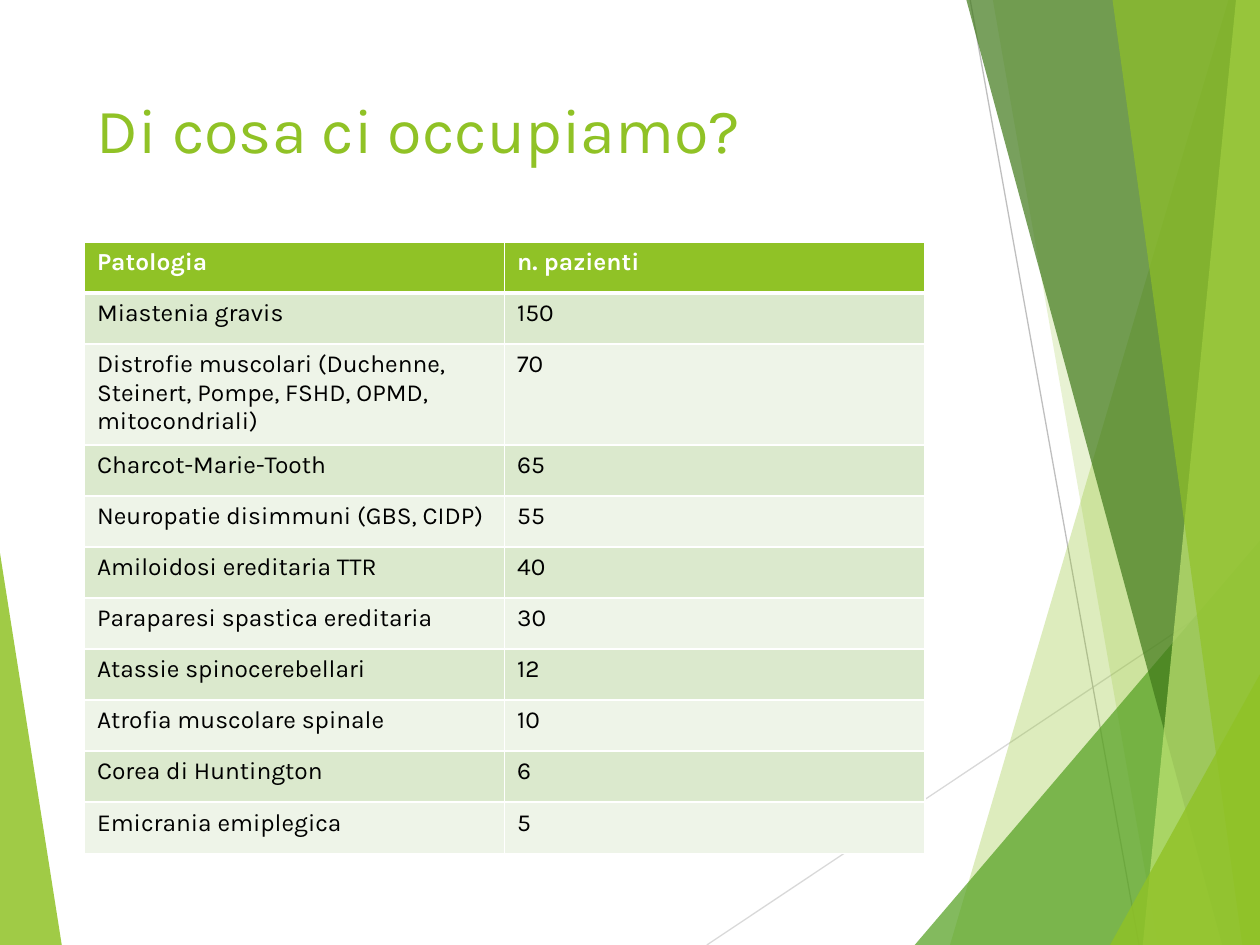
from lxml.etree import SubElement
from pptx import Presentation
from pptx.dml.color import RGBColor
from pptx.enum.shapes import MSO_CONNECTOR
from pptx.oxml.ns import qn
from pptx.util import Inches, Pt

GREEN, WHITE, BLACK = "90C226", "FFFFFF", "000000"
BANDS = ("DBE9CD", "EEF4E8")
WIDE, HIGH = 10, 7.5

# Fill, opacity in percent, corner points in inches
LEFT = (GREEN, 85, [(0, 4.39), (0.49, HIGH), (0, HIGH)])
RIGHT = [
    (GREEN, 30, [(9.75, 0), (7.54, HIGH), (WIDE, HIGH), (WIDE, 0)]),
    (GREEN, 20, [(7.88, 0), (9.19, HIGH), (WIDE, HIGH), (WIDE, 0)]),
    ("54A021", 72, [(7.26, HIGH), (WIDE, 4.29), (WIDE, HIGH)]),
    ("3F7819", 70, [(7.67, 0), (9.7, HIGH), (WIDE, HIGH), (WIDE, 0)]),
    ("C0E474", 70, [(9.81, 0), (9.07, HIGH), (WIDE, HIGH), (WIDE, 0)]),
    (GREEN, 65, [(8.83, 0), (9.86, HIGH), (WIDE, HIGH), (WIDE, 0)]),
    (GREEN, 80, [(8.81, HIGH), (WIDE, 5.35), (WIDE, HIGH)]),
]

ROWS = [
    ("Patologia", "n. pazienti"),
    ("Miastenia gravis", "150"),
    ("Distrofie muscolari (Duchenne, Steinert, Pompe, FSHD, OPMD, mitocondriali)", "70"),
    ("Charcot-Marie-Tooth", "65"),
    ("Neuropatie disimmuni (GBS, CIDP)", "55"),
    ("Amiloidosi ereditaria TTR", "40"),
    ("Paraparesi spastica ereditaria", "30"),
    ("Atassie spinocerebellari", "12"),
    ("Atrofia muscolare spinale", "10"),
    ("Corea di Huntington", "6"),
    ("Emicrania emiplegica", "5"),
]


def color(code):
    return RGBColor.from_string(code)


def paint(fill, code):
    fill.solid()
    fill.fore_color.rgb = color(code)


def edge(cell, side, width):
    """Draw a white border on one side (L, R, T or B) of a cell."""
    props = cell._tc.get_or_add_tcPr()
    line = SubElement(props, qn(f"a:ln{side}"), w=str(Pt(width)))
    solid = SubElement(line, qn("a:solidFill"))
    SubElement(solid, qn("a:srgbClr"), val=WHITE)


class Deck:
    def __init__(self, font):
        self.font = font
        self.prs = Presentation()
        self.prs.slide_width = Inches(WIDE)
        self.prs.slide_height = Inches(HIGH)
        self.slide = self.prs.slides.add_slide(self.prs.slide_layouts[6])
        self.shapes = self.slide.shapes

    def label(self, frame, text, size, code, bold=False):
        frame.text = text
        for run in frame.paragraphs[0].runs:
            run.font.name = self.font
            run.font.size = Pt(size)
            run.font.bold = bold
            run.font.color.rgb = color(code)

    def facet(self, code, alpha, points):
        """Add a translucent polygon."""
        first, *rest = [(Inches(x), Inches(y)) for x, y in points]
        outline = self.shapes.build_freeform(*first)
        outline.add_line_segments(rest)
        shape = outline.convert_to_shape()
        shape.shadow.inherit = False
        shape.line.fill.background()
        paint(shape.fill, code)
        tint = shape._element.spPr.find(qn("a:solidFill"))[0]
        SubElement(tint, qn("a:alpha"), val=str(alpha * 1000))

    def line(self, start, end, code):
        ends = [Inches(n) for n in (*start, *end)]
        line = self.shapes.add_connector(MSO_CONNECTOR.STRAIGHT, *ends)
        line.line.width = Pt(0.75)
        line.line.color.rgb = color(code)
        SubElement(line._element.spPr, qn("a:effectLst"))

    def title(self, text, *box):
        frame = self.shapes.add_textbox(*map(Inches, box)).text_frame
        frame.word_wrap = True
        self.label(frame, text, 36, GREEN)

    def table(self, rows, *box):
        grid = self.shapes.add_table(len(rows), len(rows[0]), *map(Inches, box)).table
        for r, row in enumerate(rows):
            head = r == 0
            back = GREEN if head else BANDS[(r - 1) % 2]
            for c, text in enumerate(row):
                cell = grid.cell(r, c)
                self.label(cell.text_frame, text, 14, WHITE if head else BLACK, head)
                edge(cell, "L", 1)
                edge(cell, "R", 1)
                edge(cell, "T", 3 if r == 1 else 1)
                edge(cell, "B", 3 if head else 1)
                paint(cell.fill, back)


def main():
    deck = Deck("Karla")
    deck.facet(*LEFT)
    deck.line((5.61, HIGH), (WIDE, 4.57), "D9D9D9")
    deck.line((7.7, 0), (9.04, HIGH), "BFBFBF")
    for facet in RIGHT:
        deck.facet(*facet)
    deck.title("Di cosa ci occupiamo?", 0.67, 0.67, 6.94, 1.44)
    deck.table(ROWS, 0.67, 1.92, 6.67, 4.46)
    deck.prs.save("out.pptx")


if __name__ == "__main__":
    main()
